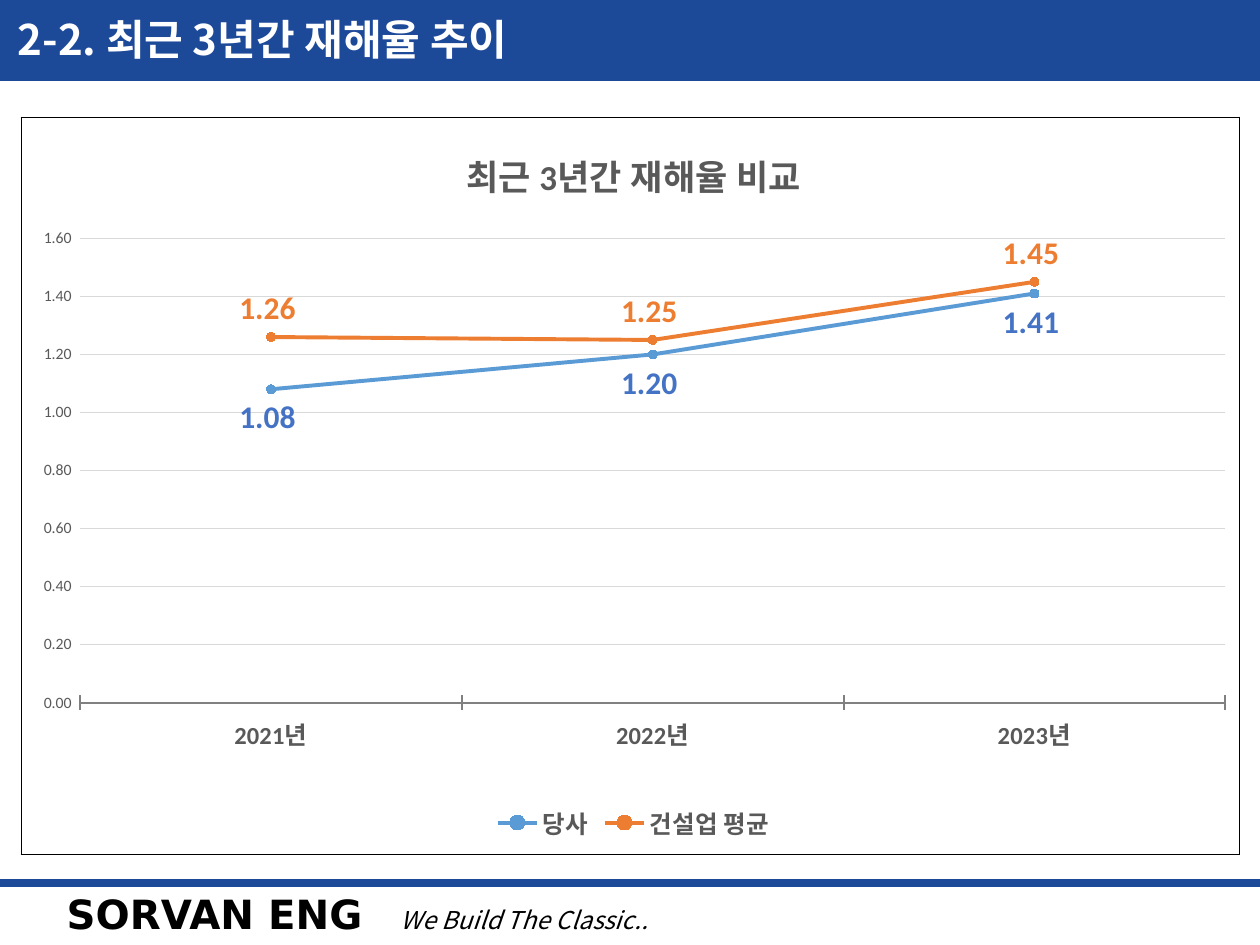
from dataclasses import dataclass

import pptx
import pptx.chart.data
import pptx.dml.color
import pptx.enum.chart
import pptx.enum.shapes
import pptx.enum.text
import pptx.oxml
import pptx.oxml.ns
import pptx.util
from lxml import etree

Pt = pptx.util.Pt
qn = pptx.oxml.ns.qn
LabelPosition = pptx.enum.chart.XL_LABEL_POSITION
TickMark = pptx.enum.chart.XL_TICK_MARK

COLORS = {
    "navy": "1D4999", "white": "FFFFFF", "black": "000000",
    "gray": "595959", "axis": "808080", "grid": "D9D9D9",
    "blue": "5B9BD5", "label_blue": "4472C4", "orange": "ED7D31",
}
KOREAN = "Noto Sans CJK KR"
NUMBER_FORMAT = "0.00_ "
YEARS = ("2021년", "2022년", "2023년")


@dataclass(frozen=True)
class RateSeries:
    name: str
    rates: tuple[float, ...]
    color: str
    label_color: str
    label_position: LabelPosition


RATES = (
    RateSeries("당사", (1.08, 1.2, 1.41), "blue", "label_blue", LabelPosition.BELOW),
    RateSeries("건설업 평균", (1.26, 1.25, 1.45), "orange", "orange", LabelPosition.ABOVE),
)


def rgb(color: str) -> pptx.dml.color.RGBColor:
    return pptx.dml.color.RGBColor.from_string(COLORS[color])


def set_font(font, size: float, color: str = "gray", name: str = "Calibri",
             bold: bool = False, italic: bool = False) -> None:
    font.size, font.name, font.bold, font.italic = Pt(size), name, bold, italic
    font.color.rgb = rgb(color)


def add_text(paragraph, text: str, **text_format) -> None:
    run = paragraph.add_run()
    run.text = text
    set_font(run.font, **text_format)
    east_asian = etree.SubElement(run.font._element, qn("a:ea"))
    east_asian.set("typeface", KOREAN)


def set_line(line, color: str, width: float) -> None:
    line.color.rgb = rgb(color)
    line.width = Pt(width)


def add_header(slide, text: str) -> None:
    bar = slide.shapes.add_shape(
        pptx.enum.shapes.MSO_SHAPE.RECTANGLE, 0, 0, Pt(720), Pt(46))
    bar.shadow.inherit = False
    bar.fill.solid()
    bar.fill.fore_color.rgb = rgb("navy")
    set_line(bar.line, "navy", 0.75)

    title = slide.shapes.title
    bar._element.addnext(title._element)
    title.left, title.top, title.width, title.height = Pt(3), Pt(4.3), Pt(325), Pt(36)
    frame = title.text_frame
    frame.word_wrap = False
    frame.auto_size = pptx.enum.text.MSO_AUTO_SIZE.SHAPE_TO_FIT_TEXT
    frame.vertical_anchor = pptx.enum.text.MSO_ANCHOR.TOP
    frame.paragraphs[0].alignment = pptx.enum.text.PP_ALIGN.LEFT
    add_text(frame.paragraphs[0], text, size=24, color="white", name=KOREAN, bold=True)


def add_footer(slide, company: str, slogan: str) -> None:
    rule = slide.shapes.add_connector(
        pptx.enum.shapes.MSO_CONNECTOR.STRAIGHT, 0, Pt(504.7), Pt(720), Pt(504.7))
    set_line(rule.line, "navy", 4.5)
    etree.SubElement(rule._element.spPr, qn("a:effectLst"))

    footer = slide.shapes.add_textbox(Pt(31), Pt(509.8), Pt(589), Pt(29.5))
    footer.text_frame.word_wrap = True
    paragraph = footer.text_frame.paragraphs[0]
    paragraph.line_spacing = 0.8
    tabs = etree.SubElement(paragraph._p.get_or_add_pPr(), qn("a:tabLst"))
    etree.SubElement(tabs, qn("a:tab"), pos=str(Pt(191)), algn="l")
    add_text(paragraph, company + "\t", size=23, color="black", name="DejaVu Sans", bold=True)
    add_text(paragraph, slogan, size=14, color="black", name=KOREAN, italic=True)


def add_frame_table(slide) -> None:
    table = slide.shapes.add_table(
        1, 1, Pt(12.2), Pt(67), Pt(696.2), Pt(421.2)).table
    table.first_row = table.horz_banding = False
    cell = table.cell(0, 0)
    properties = cell._tc.get_or_add_tcPr()
    for side in ("L", "R", "T", "B"):
        border = etree.SubElement(properties, qn(f"a:ln{side}"), w=str(Pt(1)))
        fill = etree.SubElement(border, qn("a:solidFill"))
        etree.SubElement(fill, qn("a:srgbClr"), val=COLORS["black"])
    cell.fill.background()


def set_plot_layout(chart, **box: float) -> None:
    """Place the inner plot area by fractions of the chart's size."""
    plot_area = chart._chartSpace.chart.plotArea
    for old in plot_area.findall(qn("c:layout")):
        plot_area.remove(old)
    layout = etree.Element(qn("c:layout"))
    plot_area.insert(0, layout)
    manual = etree.SubElement(layout, qn("c:manualLayout"))
    settings = {"layoutTarget": "inner", "xMode": "edge", "yMode": "edge", **box}
    for tag, value in settings.items():
        etree.SubElement(manual, qn(f"c:{tag}"), val=str(value))


def format_series(series, rate: RateSeries) -> None:
    series.smooth = False
    set_line(series.format.line, rate.color, 2.25)
    series.marker.style = pptx.enum.chart.XL_MARKER_STYLE.CIRCLE
    series.marker.size = 5
    series.marker.format.fill.solid()
    series.marker.format.fill.fore_color.rgb = rgb(rate.color)
    set_line(series.marker.format.line, rate.color, 0.75)
    labels = series.data_labels
    labels.show_value = True
    labels.position = rate.label_position
    labels.number_format, labels.number_format_is_linked = NUMBER_FORMAT, False
    set_font(labels.font, 18, rate.label_color, bold=True)


def format_axes(chart) -> None:
    years = chart.category_axis
    years.major_tick_mark, years.minor_tick_mark = TickMark.CROSS, TickMark.NONE
    set_line(years.format.line, "axis", 1.25)
    set_font(years.tick_labels.font, 14, bold=True)

    scale = chart.value_axis
    scale.minimum_scale, scale.maximum_scale, scale.major_unit = 0, 1.6, 0.2
    scale.major_tick_mark = scale.minor_tick_mark = TickMark.NONE
    scale.format.line.fill.background()
    set_line(scale.major_gridlines.format.line, "grid", 0.75)
    scale.tick_labels.number_format = NUMBER_FORMAT
    scale.tick_labels.number_format_is_linked = False
    set_font(scale.tick_labels.font, 9)


def add_rate_chart(slide, heading: str) -> None:
    data = pptx.chart.data.CategoryChartData(number_format=NUMBER_FORMAT)
    data.categories = YEARS
    for rate in RATES:
        data.add_series(rate.name, rate.rates)
    chart = slide.shapes.add_chart(
        pptx.enum.chart.XL_CHART_TYPE.LINE_MARKERS,
        Pt(13), Pt(67.7), Pt(698.4), Pt(415.4), data).chart
    set_font(chart.font, 10, "black")
    chart.has_title = True
    add_text(chart.chart_title.text_frame.paragraphs[0], heading, size=20, bold=True)
    chart.chart_title.include_in_layout = False
    chart.has_legend = True
    chart.legend.position = pptx.enum.chart.XL_LEGEND_POSITION.BOTTOM
    chart.legend.include_in_layout = False
    set_font(chart.legend.font, 14, bold=True)
    chart.plots[0].vary_by_categories = False
    for series, rate in zip(chart.plots[0].series, RATES):
        format_series(series, rate)
    format_axes(chart)
    set_plot_layout(chart, x=0.047, y=0.165, w=0.937, h=0.639)


def main() -> None:
    presentation = pptx.Presentation()
    presentation.slide_width, presentation.slide_height = Pt(720), Pt(540)
    slide = presentation.slides.add_slide(presentation.slide_layouts[5])
    add_header(slide, "2-2. 최근 3년간 재해율 추이")
    add_footer(slide, "SORVAN ENG", "We Build The Classic..")
    add_frame_table(slide)
    add_rate_chart(slide, "최근 3년간 재해율 비교")
    presentation.save("out.pptx")


if __name__ == "__main__":
    main()
